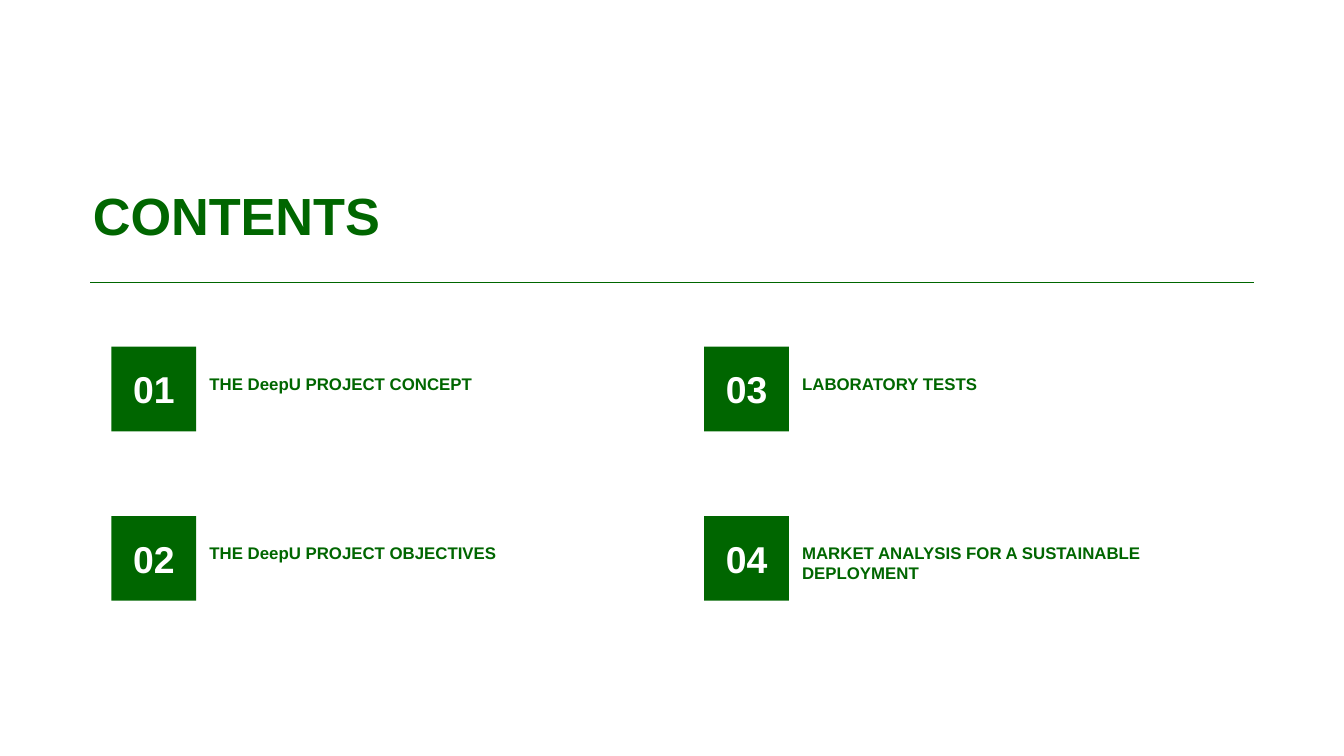
from pptx import Presentation
from pptx import util as u
from pptx.dml.color import RGBColor
from pptx.enum import shapes, text
from pptx.oxml.ns import qn
from lxml import etree

GREEN = RGBColor(0x00, 0x66, 0x00)
WHITE = RGBColor(0xFF, 0xFF, 0xFF)
UNIT = 0.21
LEFT, TOP = 0.83, 2.58
SIDE, ROW, COL = 3, 6, 21

ITEMS = [
    ("THE DeepU PROJECT CONCEPT", 10.52, 1),
    ("THE DeepU PROJECT OBJECTIVES", 11.19, 1),
    ("LABORATORY TESTS", 7.29, 1),
    ("MARKET ANALYSIS FOR A SUSTAINABLE DEPLOYMENT", 15.38, 2),
]


def write(shape, words, size, color=GREEN, align=text.PP_ALIGN.LEFT,
          anchor=text.MSO_ANCHOR.TOP, wrap=True, grow=False):
    frame = shape.text_frame
    frame.word_wrap = wrap
    frame.vertical_anchor = anchor
    frame.auto_size = (text.MSO_AUTO_SIZE.SHAPE_TO_FIT_TEXT if grow
                       else text.MSO_AUTO_SIZE.NONE)
    para = frame.paragraphs[0]
    para.alignment = align
    para.line_spacing = 1.0
    run = para.add_run()
    run.text = words
    font = run.font
    font.name, font.size, font.bold = "Arial", u.Pt(size), True
    font.color.rgb = color


class Deck:
    def __init__(self, slide):
        self.slide = slide

    def box(self, col, row, wide, high):
        return (u.Inches(LEFT + col * UNIT), u.Inches(TOP + row * UNIT),
                u.Inches(wide * UNIT), u.Inches(high * UNIT))

    def title(self, words, *place):
        head = self.slide.shapes.title
        head.left, head.top, head.width, head.height = self.box(*place)
        write(head, words, 28, wrap=False, grow=True)

    def rule(self, col, row, wide):
        x, y, w, _ = self.box(col, row, wide, 0)
        line = self.slide.shapes.add_connector(
            shapes.MSO_CONNECTOR.STRAIGHT, x, y, x + w, y)
        line.line.color.rgb = GREEN
        line.line.width = u.Pt(0.75)
        etree.SubElement(line.element.spPr, qn("a:effectLst"))

    def badge(self, words, col, row):
        tile = self.slide.shapes.add_shape(
            shapes.MSO_SHAPE.RECTANGLE, *self.box(col, row, SIDE, SIDE))
        tile.shadow.inherit = False
        tile.fill.solid()
        tile.fill.fore_color.rgb = GREEN
        tile.line.fill.background()
        write(tile, words, 20, WHITE, text.PP_ALIGN.CENTER,
              text.MSO_ANCHOR.MIDDLE)

    def label(self, words, col, row, wide, lines):
        note = self.slide.shapes.add_textbox(
            *self.box(col, row, wide, 0.48 + 0.71 * lines))
        write(note, words, 9, wrap=lines > 1, grow=True)


def main():
    show = Presentation()
    show.slide_width = u.Inches(10)
    show.slide_height = show.slide_width * 9 // 16
    deck = Deck(show.slides.add_slide(show.slide_layouts[5]))
    deck.title("CONTENTS", -1.14, -6.02, 11.43, 2.71)
    deck.rule(-0.76, -2.28, 41.24)
    for i, (words, wide, lines) in enumerate(ITEMS):
        col, row = i // 2 * COL, i % 2 * ROW
        deck.badge(f"{i + 1:02}", col, row)
        deck.label(words, col + SIDE, row + 0.71, wide, lines)
    show.save("out.pptx")


if __name__ == "__main__":
    main()
